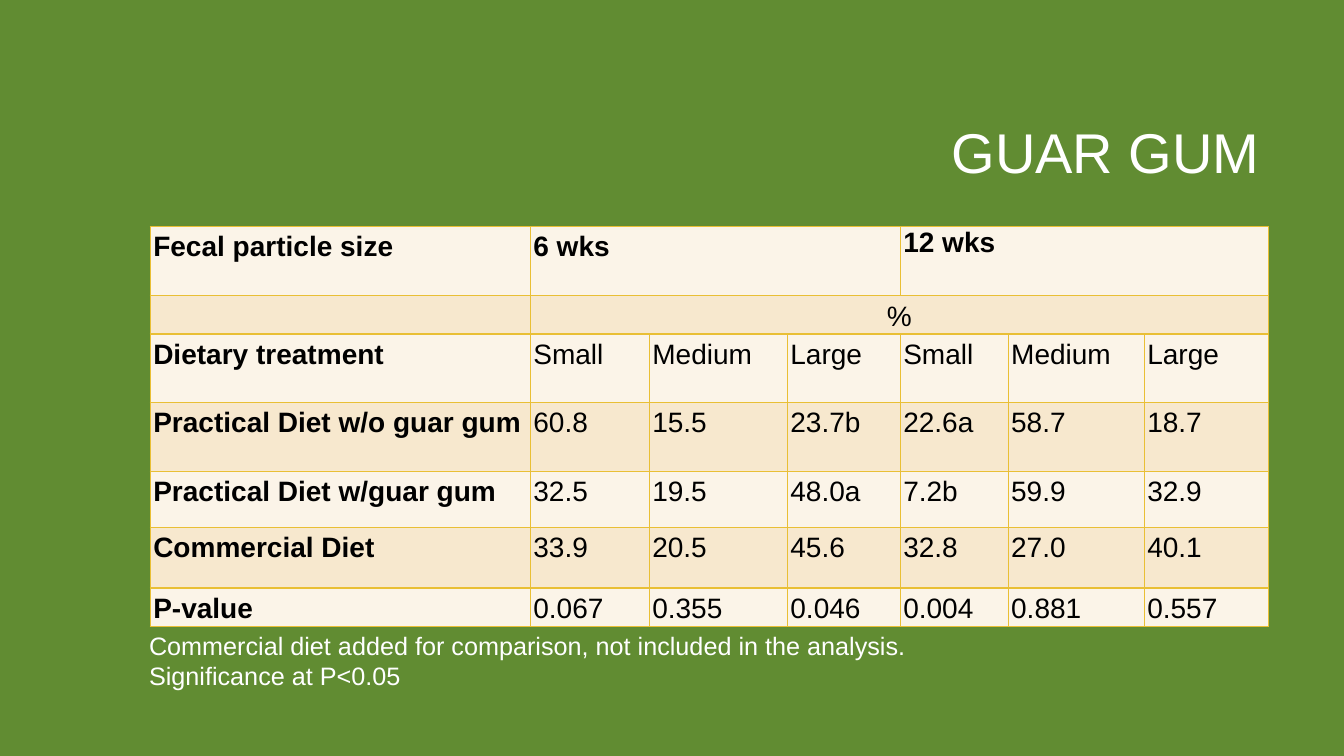
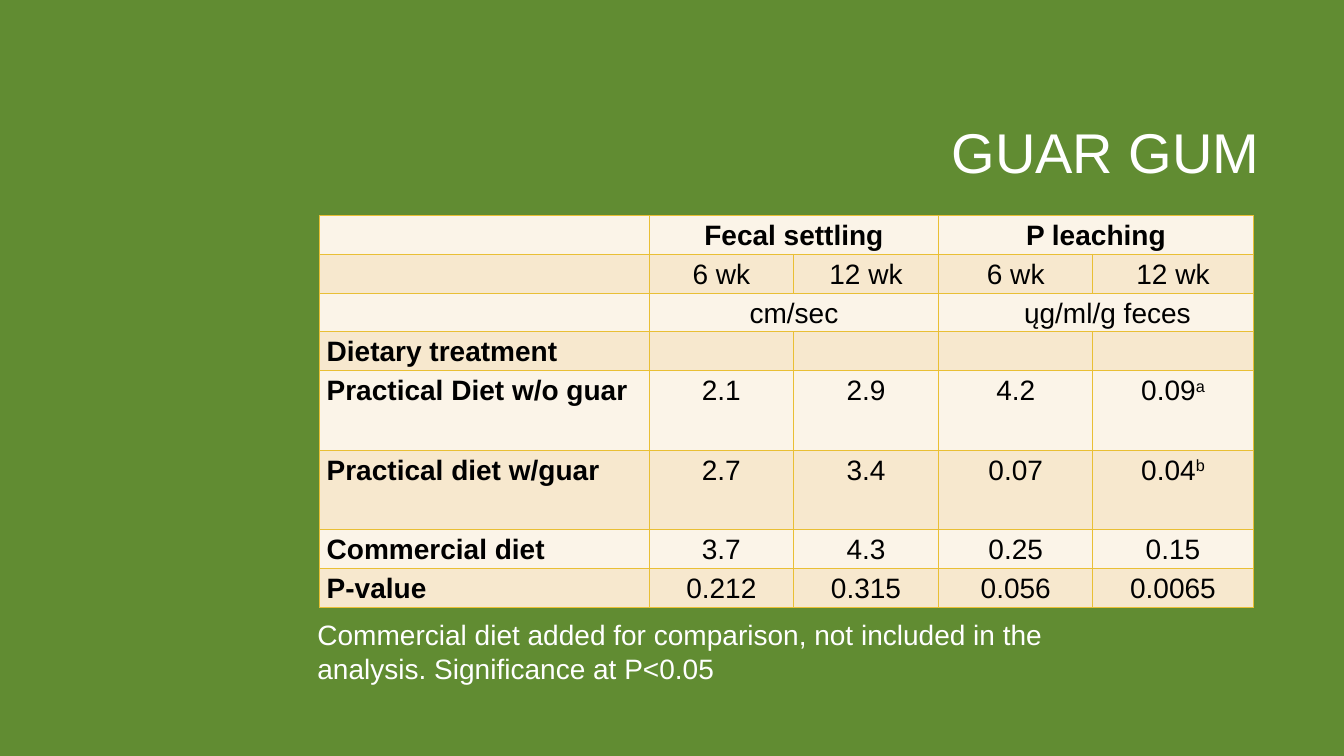
from lxml.etree import SubElement
from pptx import Presentation
from pptx.dml.color import RGBColor
from pptx.enum.text import MSO_ANCHOR as Anchor, PP_ALIGN as Align
from pptx.oxml.ns import qn
from pptx.util import Inches, Pt

# Shared style
FONT = "Arial"
COLORS = {"ground": "618C32", "light": "FFFFFF", "ink": "000000",
          "odd": "FBF4E8", "even": "F7E8CE", "rule": "E9BF35"}
TITLE_BOX = (3.17, 0.84, 9.42, 1.41)
NOTE = ("Commercial diet added for comparison, not included in the analysis. "
        "Significance at P<0.05")

# Content: None continues the cell on its left, ^ starts a superscript
SLIDES = [
    {
        "title": "GUAR GUM",
        "at": (1.49, 2.25),
        "cols": [3.77, 1.18, 1.37, 1.12, 1.07, 1.35, 1.23],
        "rows": [0.68, 0.38, 0.68, 0.68, 0.56, 0.6, 0.38],
        "pad": 0.03,
        "align": Align.LEFT,
        "cells": [
            ["Fecal particle size", "6 wks", None, None, "12 wks", None, None],
            ["", "%", None, None, None, None, None],
            ["Dietary treatment", "Small", "Medium", "Large", "Small", "Medium", "Large"],
            ["Practical Diet w/o guar gum", "60.8", "15.5", "23.7b", "22.6a", "58.7", "18.7"],
            ["Practical Diet w/guar gum", "32.5", "19.5", "48.0a", "7.2b", "59.9", "32.9"],
            ["Commercial Diet", "33.9", "20.5", "45.6", "32.8", "27.0", "40.1"],
            ["P-value", "0.067", "0.355", "0.046", "0.004", "0.881", "0.557"],
        ],
        "special": {(0, 4): {"spacing": 1.0},
                    (1, 1): {"align": Align.CENTER, "anchor": Anchor.MIDDLE}},
        "note_box": (1.38, 6.2, 7.83, 0.71),
        "note_size": 18,
    },
    {
        "title": "GUAR GUM",
        "at": (3.17, 2.14),
        "cols": [3.27, 1.43, 1.44, 1.53, 1.59],
        "rows": [0.38] * 4 + [0.79] * 2 + [0.38] * 2,
        "pad": 0.07,
        "align": Align.CENTER,
        "cells": [
            ["", "Fecal settling", None, "P leaching", None],
            ["", "6 wk", "12 wk", "6 wk", "12 wk"],
            ["", "cm/sec", None, "ųg/ml/g feces", None],
            ["Dietary treatment", "", "", "", ""],
            ["Practical Diet w/o guar", "2.1", "2.9", "4.2", "0.09^a"],
            ["Practical diet w/guar", "2.7", "3.4", "0.07", "0.04^b"],
            ["Commercial diet", "3.7", "4.3", "0.25", "0.15"],
            ["P-value", "0.212", "0.315", "0.056", "0.0065"],
        ],
        "special": {(2, 3): {"left": 0.3}},
        "note_box": (3.05, 6.08, 8.43, 0.77),
        "note_size": 20,
    },
]


def rgb(name):
    return RGBColor.from_string(COLORS[name])


def add_run(p, text, size, color, bold=False):
    r = p.add_run()
    r.text = text
    r.font.name, r.font.size, r.font.bold = FONT, Pt(size), bold
    r.font.color.rgb = rgb(color)
    return r


def add_text(s, box, text, size, align=Align.LEFT, anchor=Anchor.TOP, spacing=1.0):
    tf = s.shapes.add_textbox(*map(Inches, box)).text_frame
    tf.word_wrap, tf.vertical_anchor = True, anchor
    p = tf.paragraphs[0]
    p.alignment, p.line_spacing = align, spacing
    add_run(p, text, size, "light")


def style_cell(cell, fill, pad, left):
    tcPr = cell._tc.get_or_add_tcPr()
    for side in ("lnL", "lnR", "lnT", "lnB"):
        ln = SubElement(tcPr, qn("a:" + side), w=str(Pt(1)))
        SubElement(SubElement(ln, qn("a:solidFill")), qn("a:srgbClr"), val=COLORS["rule"])
    cell.fill.solid()
    cell.fill.fore_color.rgb = rgb(fill)
    cell.margin_left, cell.margin_right = Inches(left), Inches(pad)
    cell.margin_top = cell.margin_bottom = 0


def add_table(s, d):
    cols, rows, cells = d["cols"], d["rows"], d["cells"]
    size = (sum(cols), sum(rows))
    table = s.shapes.add_table(len(rows), len(cols),
                               *map(Inches, d["at"] + size)).table
    table.first_row = table.horz_banding = False
    for col, width in zip(table.columns, cols):
        col.width = Inches(width)
    for i, (row, height) in enumerate(zip(cells, rows)):
        table.rows[i].height = Inches(height)
        for j, text in enumerate(row):
            cell, opt = table.cell(i, j), d["special"].get((i, j), {})
            style_cell(cell, "even" if i % 2 else "odd", d["pad"], opt.get("left", d["pad"]))
            if not text:
                continue
            # Join the cell with the continuation cells on its right
            end = j
            while end + 1 < len(row) and row[end + 1] is None:
                end += 1
            if end > j:
                cell.merge(table.cell(i, end))
            cell.vertical_anchor = opt.get("anchor", Anchor.TOP)
            p = cell.text_frame.paragraphs[0]
            p.alignment = opt.get("align", d["align"] if j else Align.LEFT)
            p.line_spacing = opt.get("spacing", 1.15)
            base, _, mark = text.partition("^")
            add_run(p, base, 20, "ink", bold=i == 0 or j == 0)
            if mark:
                r = add_run(p, mark, 20, "ink")
                r.font._element.set("baseline", "30000")


def main():
    prs = Presentation()
    prs.slide_width, prs.slide_height = Inches(13.33), Inches(7.5)
    for d in SLIDES:
        s = prs.slides.add_slide(prs.slide_layouts[6])
        s.background.fill.solid()
        s.background.fill.fore_color.rgb = rgb("ground")
        add_text(s, TITLE_BOX, d["title"], 40, Align.RIGHT, Anchor.MIDDLE, 0.9)
        add_table(s, d)
        add_text(s, d["note_box"], NOTE, d["note_size"])
    prs.save("out.pptx")


if __name__ == "__main__":
    main()
